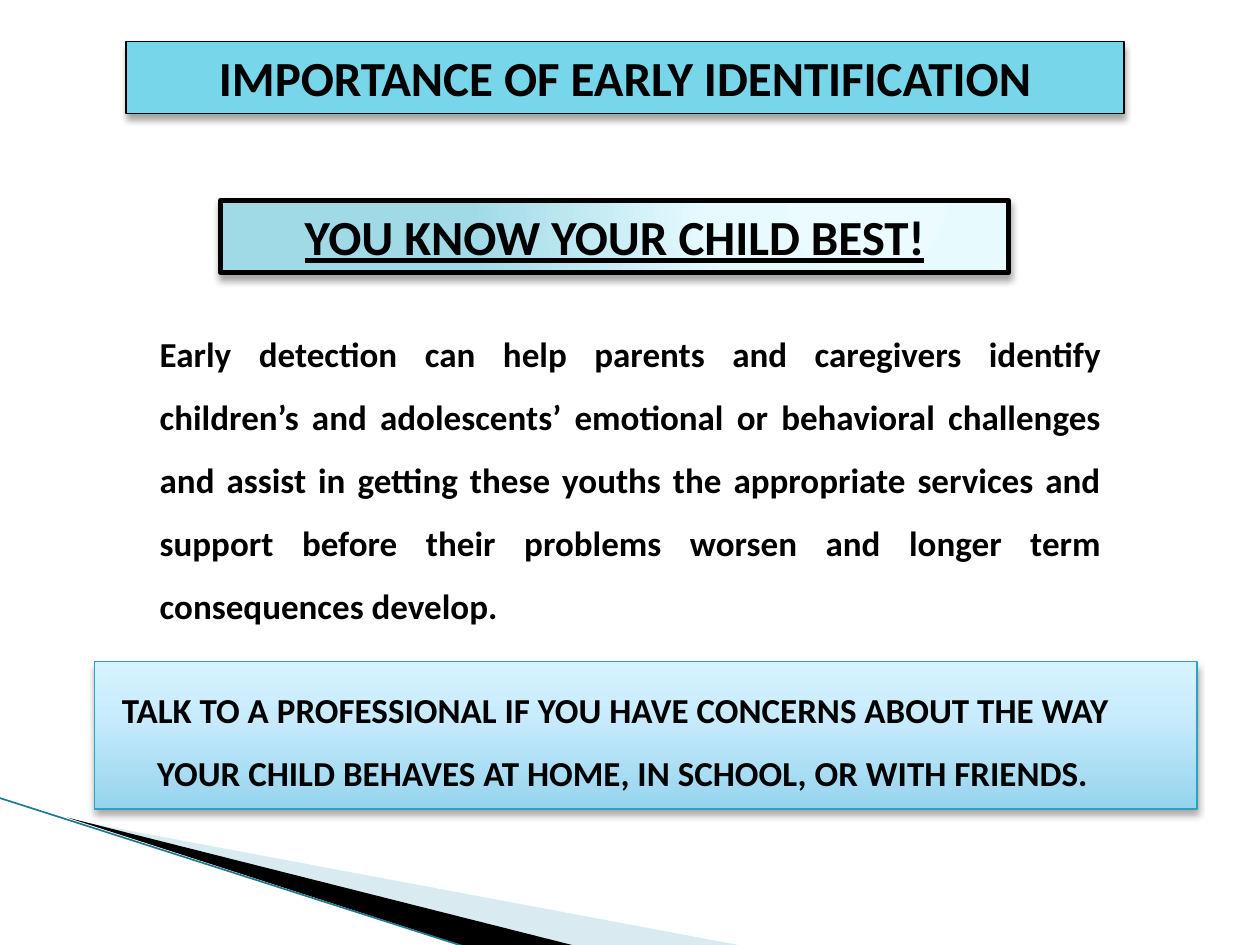
from lxml import etree
from pptx import Presentation
from pptx.dml.color import RGBColor
from pptx.enum import shapes, text
from pptx.oxml import parse_xml
from pptx.oxml.ns import nsdecls, qn
from pptx.util import Cm, Pt

COLORS = {"black": "000000", "cyan": "78D6EA", "teal": "2DA2BF",
          "pale": "A0CBDC", "edge": "1F7A8C"}

# Content: wording, box (left, top, width, height in cm), look, text format
BOXES = [
    dict(words="IMPORTANCE OF EARLY IDENTIFICATION", at=(2.54, 0.84, 20.12, 1.45),
         fill="cyan", line=("black", 0.75), fmt=dict(size=28, align="CENTER")),
    dict(words="TALK TO A PROFESSIONAL IF YOU HAVE CONCERNS ABOUT THE WAY "
               "YOUR CHILD BEHAVES AT HOME, IN SCHOOL, OR WITH FRIENDS.",
         at=(1.9, 13.34, 22.23, 2.97), line=("teal", 0.75),
         grad=([(0, "96D4EE"), (65, "C9ECFC"), (100, "D7F2FF")],
               '<a:lin ang="16200000" scaled="0"/>'),
         fmt=dict(spacing=1.5, before=4, hanging=(1.02, -0.71), anchor="TOP")),
    dict(words="YOU KNOW YOUR CHILD BEST!", at=(4.45, 4.04, 15.88, 1.45),
         line=("black", 3),
         grad=([(0, "EBFBFF"), (40, "E7FBFF"), (100, "A1DAE7")],
               '<a:path path="circle"><a:fillToRect l="65000" b="98000"/></a:path>'),
         fmt=dict(size=28, align="CENTER", underline=True)),
]
MESSAGE = ("Early detection can help parents and caregivers identify children’s and "
           "adolescents’ emotional or behavioral challenges and assist in getting these "
           "youths the appropriate services and support before their problems worsen "
           "and longer term consequences develop.")
MESSAGE_AT = (2.97, 6.15, 19.48, 6.53)

# Corner decoration: outline points in cm, colour, opacity in percent
WEDGES = [
    ([(1.4, 16.52), (14.99, 19.07), (11.58, 19.07)], "pale", 40),
    ([(1.35, 16.48), (11.61, 19.07), (9.45, 19.1)], "black", 100),
]
EDGE = (-0.03, 16.08, 9.42, 19.1)


def rgb(name):
    return RGBColor.from_string(COLORS[name])


def write(sp, words, size=20, align="LEFT", spacing=None, before=None,
          hanging=None, underline=None, anchor="TOP"):
    tf = sp.text_frame
    tf.word_wrap = True
    tf.vertical_anchor = getattr(text.MSO_ANCHOR, anchor)
    p = tf.paragraphs[0]
    p.alignment = getattr(text.PP_ALIGN, align)
    if spacing:
        p.line_spacing = spacing
    if before:
        p.space_before = Pt(before)
    if hanging:
        margin, indent = hanging
        pPr = p._p.get_or_add_pPr()
        pPr.set("marL", str(Cm(margin)))
        pPr.set("indent", str(Cm(indent)))
    r = p.add_run()
    r.text = words
    r.font.name, r.font.size, r.font.bold = "Calibri", Pt(size), True
    r.font.underline = underline
    r.font.color.rgb = rgb("black")


def set_gradient(sp, stops, direction):
    sp.fill.background()
    old = sp._element.spPr.find(qn("a:noFill"))
    gs = "".join(f'<a:gs pos="{pos * 1000}"><a:srgbClr val="{c}"/></a:gs>'
                 for pos, c in stops)
    old.getparent().replace(old, parse_xml(
        f'<a:gradFill {nsdecls("a")} rotWithShape="1">'
        f'<a:gsLst>{gs}</a:gsLst>{direction}</a:gradFill>'))


def add_shadow(sp):
    sp.shadow.inherit = False
    sp._element.spPr.find(qn("a:effectLst")).append(parse_xml(
        f'<a:outerShdw {nsdecls("a")} blurRad="{Pt(4)}" dist="{Pt(3)}" dir="5400000" '
        f'rotWithShape="0"><a:srgbClr val="{COLORS["black"]}">'
        '<a:alpha val="35000"/></a:srgbClr></a:outerShdw>'))


prs = Presentation()
prs.slide_width, prs.slide_height = Cm(25.4), Cm(19.05)
s = prs.slides.add_slide(prs.slide_layouts[6])

# Corner wedges and their edge line
for points, color, opacity in WEDGES:
    start, *rest = [(Cm(x), Cm(y)) for x, y in points]
    builder = s.shapes.build_freeform(*start)
    builder.add_line_segments(rest, close=True)
    sp = builder.convert_to_shape()
    sp.shadow.inherit = False
    sp.line.fill.background()
    sp.fill.solid()
    sp.fill.fore_color.rgb = rgb(color)
    if opacity < 100:
        clr = sp._element.spPr.find(".//" + qn("a:srgbClr"))
        etree.SubElement(clr, qn("a:alpha")).set("val", str(opacity * 1000))

edge = s.shapes.add_connector(shapes.MSO_CONNECTOR.STRAIGHT, *map(Cm, EDGE))
edge.line.color.rgb = rgb("edge")
edge.line.width = Pt(0.95)
etree.SubElement(edge._element.spPr, qn("a:effectLst"))

# Shadowed boxes
for box in BOXES:
    sp = s.shapes.add_shape(shapes.MSO_SHAPE.RECTANGLE, *map(Cm, box["at"]))
    if "grad" in box:
        set_gradient(sp, *box["grad"])
    else:
        sp.fill.solid()
        sp.fill.fore_color.rgb = rgb(box["fill"])
    color, width = box["line"]
    sp.line.color.rgb = rgb(color)
    sp.line.width = Pt(width)
    add_shadow(sp)
    write(sp, box["words"], **box["fmt"])

# Message
write(s.shapes.add_textbox(*map(Cm, MESSAGE_AT)), MESSAGE,
      align="JUSTIFY", spacing=1.5)

prs.save("out.pptx")
